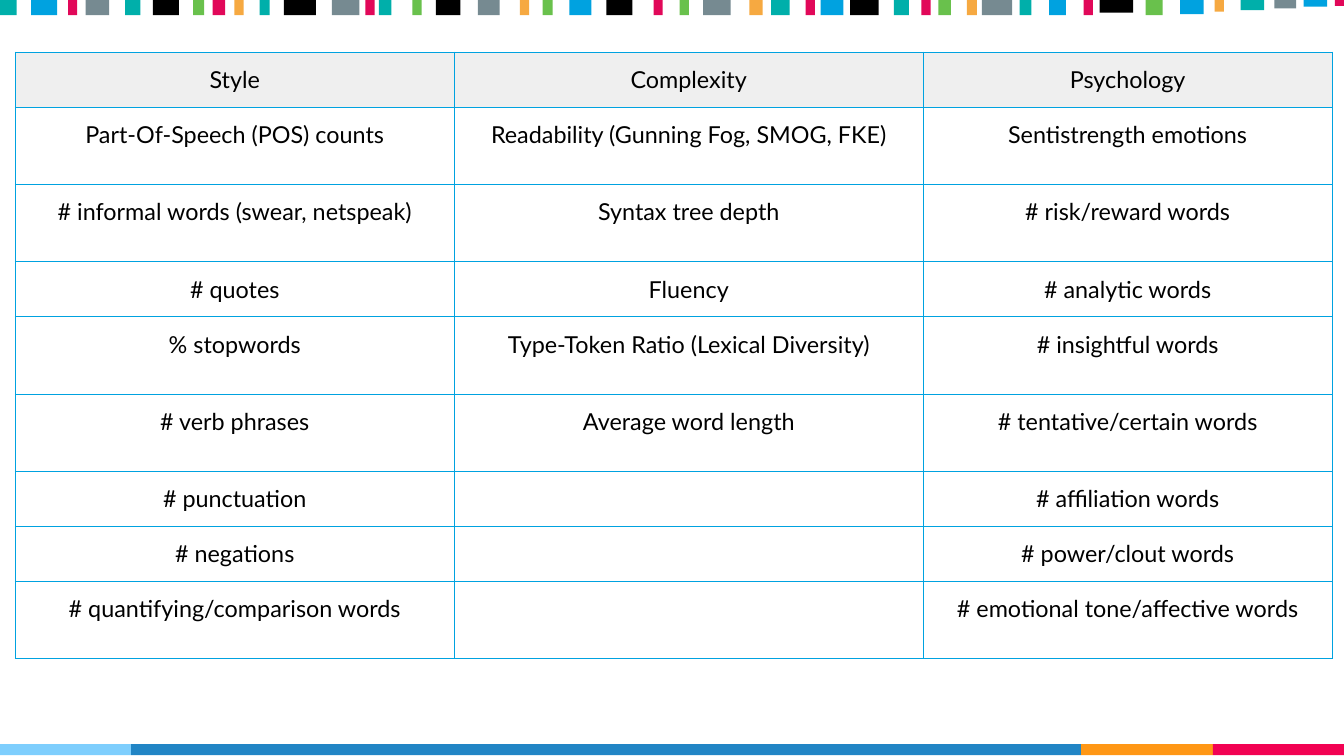
from lxml import etree
from pptx import Presentation
from pptx import util as u
from pptx.dml.color import RGBColor
from pptx.enum import shapes, text
from pptx.oxml.ns import qn

COLORS = {
    "teal": "00AFAA", "blue": "00A2E0", "pink": "E10859", "gray": "768A91",
    "black": "000000", "green": "69C14C", "amber": "F6A941",
    "orange": "FF9715", "red": "F20253", "sky": "7ECEFD", "ocean": "2185C5",
    "header": "EFEFEF",
}

STRIPE_HEIGHT = 0.18
# Left, width, colour
STRIPES = [
    (0, 0.2, "teal"), (0.37, 0.31, "blue"), (0.81, 0.11, "pink"),
    (1.02, 0.28, "gray"), (1.49, 0.18, "teal"), (1.82, 0.31, "black"),
    (2.3, 0.13, "green"), (2.53, 0.15, "pink"), (2.79, 0.11, "amber"),
    (3.09, 0.12, "teal"), (3.38, 0.38, "black"), (3.95, 0.33, "gray"),
    (4.35, 0.11, "pink"), (4.51, 0.15, "teal"), (4.91, 0.11, "green"),
    (5.19, 0.29, "black"), (5.69, 0.26, "gray"), (6.19, 0.11, "amber"),
    (6.46, 0.12, "green"), (6.78, 0.26, "blue"), (7.22, 0.31, "black"),
    (7.78, 0.11, "pink"), (8.09, 0.11, "green"), (8.37, 0.33, "gray"),
    (8.92, 0.16, "amber"), (9.18, 0.22, "teal"), (9.59, 0.11, "pink"),
    (9.77, 0.27, "blue"), (10.12, 0.34, "black"), (10.64, 0.18, "teal"),
    (10.97, 0.11, "pink"), (11.17, 0.15, "green"), (11.51, 0.12, "amber"),
    (11.69, 0.36, "gray"), (12.14, 0.14, "teal"), (12.49, 0.2, "blue"),
    (12.9, 0.11, "pink"), (13.64, 0.2, "green"),
]
# Left, width, colour, height
SHORT_STRIPES = [
    (13.09, 0.4, "black", 0.15), (14.05, 0.28, "blue", 0.17),
    (14.46, 0.11, "amber", 0.14), (14.77, 0.28, "teal", 0.12),
    (15.17, 0.26, "gray", 0.1), (15.52, 0.28, "blue", 0.08),
    (15.89, 0.11, "pink", 0.07),
]
# Width, colour, from left to right
FOOTER = [(1.56, "sky"), (11.31, "ocean"), (1.57, "orange"), (1.56, "red")]

COLUMN_WIDTHS = [5.23, 5.58, 4.87]
LOW, TALL = 0.65, 0.92
# Row height, then the three cells
FEATURES = [
    (LOW, "Style", "Complexity", "Psychology"),
    (TALL, "Part-Of-Speech (POS) counts", "Readability (Gunning Fog, SMOG, FKE)",
     "Sentistrength emotions"),
    (TALL, "# informal words (swear, netspeak)", "Syntax tree depth",
     "# risk/reward words"),
    (LOW, "# quotes", "Fluency", "# analytic words"),
    (TALL, "% stopwords", "Type-Token Ratio (Lexical Diversity)",
     "# insightful words"),
    (TALL, "# verb phrases", "Average word length", "# tentative/certain words"),
    (LOW, "# punctuation", "", "# affiliation words"),
    (LOW, "# negations", "", "# power/clout words"),
    (TALL, "# quantifying/comparison words", "", "# emotional tone/affective words"),
]


class SlideBuilder:
    font = "Lato"
    size = 20
    inset = 0.16
    border = 0.75

    def __init__(self, slide):
        self.slide = slide

    def block(self, left, top, width, height, color):
        shape = self.slide.shapes.add_shape(
            shapes.MSO_SHAPE.RECTANGLE, u.Inches(left), u.Inches(top),
            u.Inches(width), u.Inches(height))
        shape.shadow.inherit = False
        shape.fill.solid()
        shape.fill.fore_color.rgb = RGBColor.from_string(COLORS[color])
        shape.line.fill.background()

    def table(self, left, top, widths, rows):
        heights = [row[0] for row in rows]
        table = self.slide.shapes.add_table(
            len(rows), len(widths), u.Inches(left), u.Inches(top),
            u.Inches(sum(widths)), u.Inches(sum(heights))).table
        table.horz_banding = False
        for column, width in zip(table.columns, widths):
            column.width = u.Inches(width)
        for index, (height, *labels) in enumerate(rows):
            table.rows[index].height = u.Inches(height)
            for column, label in enumerate(labels):
                self.cell(table.cell(index, column), label, index == 0)

    def cell(self, cell, label, is_header):
        cell.margin_left = cell.margin_right = u.Inches(self.inset)
        cell.margin_top = cell.margin_bottom = u.Inches(self.inset)
        self.cell_borders(cell)
        if is_header:
            cell.fill.solid()
            cell.fill.fore_color.rgb = RGBColor.from_string(COLORS["header"])
        else:
            cell.fill.background()
        if not label:
            return
        paragraph = cell.text_frame.paragraphs[0]
        paragraph.alignment = text.PP_ALIGN.CENTER
        run = paragraph.add_run()
        run.text = label
        run.font.name = self.font
        run.font.size = u.Pt(self.size)
        run.font.bold = False
        run.font.color.rgb = RGBColor.from_string(COLORS["black"])

    def cell_borders(self, cell):
        properties = cell._tc.get_or_add_tcPr()
        for side in ("a:lnL", "a:lnR", "a:lnT", "a:lnB"):
            line = etree.SubElement(properties, qn(side), w=str(u.Pt(self.border)))
            fill = etree.SubElement(line, qn("a:solidFill"))
            etree.SubElement(fill, qn("a:srgbClr"), val=COLORS["blue"])


def main():
    presentation = Presentation()
    presentation.slide_width = u.Inches(16)
    presentation.slide_height = u.Inches(9)
    builder = SlideBuilder(
        presentation.slides.add_slide(presentation.slide_layouts[6]))

    # Striped band along the top
    for left, width, color in STRIPES:
        builder.block(left, 0, width, STRIPE_HEIGHT, color)
    for left, width, color, height in SHORT_STRIPES:
        builder.block(left, 0, width, height, color)

    # Footer bar
    left = 0
    for width, color in FOOTER:
        builder.block(left, 8.86, width, 0.13, color)
        left += width

    # Feature table
    builder.table(0.18, 0.62, COLUMN_WIDTHS, FEATURES)

    presentation.save("out.pptx")


if __name__ == "__main__":
    main()
